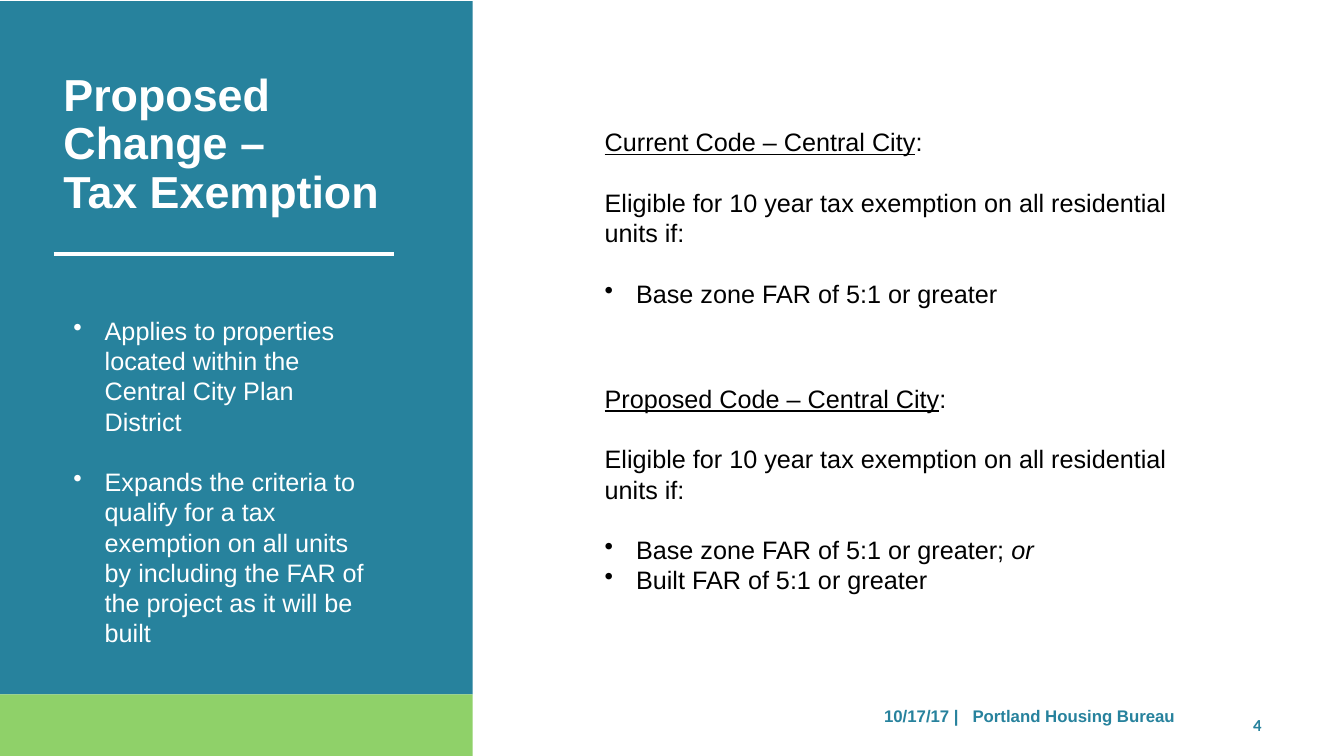
from lxml import etree
from pptx import Presentation
from pptx.dml.color import RGBColor
from pptx.enum.shapes import MSO_CONNECTOR, MSO_SHAPE
from pptx.oxml.ns import qn
from pptx.util import Cm, Pt

RECT = MSO_SHAPE.RECTANGLE
STRAIGHT = MSO_CONNECTOR.STRAIGHT
COLORS = {k: RGBColor.from_string(v) for k, v in {
    "teal": "27829D", "green": "8FD169", "white": "FFFFFF", "black": "000000",
}.items()}
LINE = Pt(21.6)

prs = Presentation()
prs.slide_width, prs.slide_height = Cm(33.87), Cm(19.05)
s = prs.slides.add_slide(prs.slide_layouts[6])


def add_text_frame(left, top, width, height, inset=True):
    sp = s.shapes.add_textbox(Cm(left), Cm(top), Cm(width), Cm(height))
    tf = sp.text_frame
    tf.word_wrap = True
    if not inset:
        tf.margin_left = tf.margin_top = tf.margin_right = tf.margin_bottom = 0
    return tf


def style(p, size, color, line=None, bold=False, font="Arial", bullet=False):
    """Format a whole paragraph, with a hanging bullet if asked for."""
    p.font.size, p.font.name, p.font.bold = Pt(size), font, bold
    p.font.color.rgb = COLORS[color]
    if line:
        p.line_spacing = line
    if bullet:
        pPr = p._p.get_or_add_pPr()
        pPr.set("marL", str(Cm(0.79)))
        pPr.set("indent", str(-Cm(0.79)))
        bu = etree.Element(qn("a:buChar"), char="•")
        pPr.find(qn("a:defRPr")).addprevious(bu)


# Side panel
for top, height, color in [(0.03, 17.47, "teal"), (17.5, 1.55, "green")]:
    sp = s.shapes.add_shape(RECT, 0, Cm(top), Cm(11.91), Cm(height))
    sp.shadow.inherit = False
    sp.fill.solid()
    sp.fill.fore_color.rgb = COLORS[color]
    sp.line.fill.background()

rule = s.shapes.add_connector(STRAIGHT, Cm(1.35), Cm(6.4), Cm(9.93), Cm(6.4))
rule.line.color.rgb = COLORS["white"]
rule.line.width = Pt(2.58)
etree.SubElement(rule._element.spPr, qn("a:effectLst"))

# Footer
p = add_text_frame(31.5, 18.01, 0.36, 0.58, inset=False).paragraphs[0]
p.text = "4"
p.space_before = Pt(0.4)
style(p, 12, "teal", bold=True, font="Calibri")
p._p.get_or_add_pPr().set("marL", str(Cm(0.08)))

p = add_text_frame(13.16, 17.78, 16.94, 0.51, inset=False).paragraphs[0]
p.text = "\t10/17/17 |\tPortland Housing Bureau"
style(p, 12, "teal", line=Pt(14.2), bold=True)
tabs = etree.Element(qn("a:tabLst"))
for pos in (9.12, 11.35):
    etree.SubElement(tabs, qn("a:tab"), pos=str(Cm(pos)), algn="l")
p._p.pPr.find(qn("a:defRPr")).addprevious(tabs)

# Title
tf = add_text_frame(1.6, 1.63, 8.15, 3.94, inset=False)
tf.margin_top = Cm(0.18)
p = tf.paragraphs[0]
p.text = "Proposed Change –\vTax Exemption"
p.space_before = Pt(5.2)
style(p, 32, "white", line=Pt(34.7), bold=True)

# Side notes
tf = add_text_frame(1.6, 7.82, 8.15, 10.26)
notes = [
    "Applies to properties located within the Central City Plan District",
    "Expands the criteria to qualify for a tax exemption on all units "
    "by including the FAR of the project as it will be built",
]
for i, note in enumerate(notes):
    p = tf.add_paragraph() if i else tf.paragraphs[0]
    p.text = note
    p.space_before = LINE if i else 0
    style(p, 18, "white", line=LINE, bullet=True)

# Code sections: each criterion is its text and an italic ending
sections = [
    ("Current", 3.07, 4.88, [("Base zone FAR of 5:1 or greater", "")]),
    ("Proposed", 9.53, 5.64, [("Base zone FAR of 5:1 or greater; ", "or"),
                              ("Built FAR of 5:1 or greater", "")]),
]
for name, top, height, criteria in sections:
    tf = add_text_frame(14.99, top, 15.67, height)
    p = tf.paragraphs[0]
    r = p.add_run()
    r.text = f"{name} Code – Central City"
    r.font.underline = True
    p.add_run().text = ":"
    style(p, 18, "black", line=LINE)

    p = tf.add_paragraph()
    p.text = "Eligible for 10 year tax exemption on all residential units if:"
    p.space_before = LINE
    style(p, 18, "black", line=LINE)

    for i, (criterion, ending) in enumerate(criteria):
        p = tf.add_paragraph()
        p.text = criterion
        if ending:
            r = p.add_run()
            r.text = ending
            r.font.italic = True
        p.space_before = 0 if i else LINE
        style(p, 18, "black", line=LINE, bullet=True)

prs.save("out.pptx")
